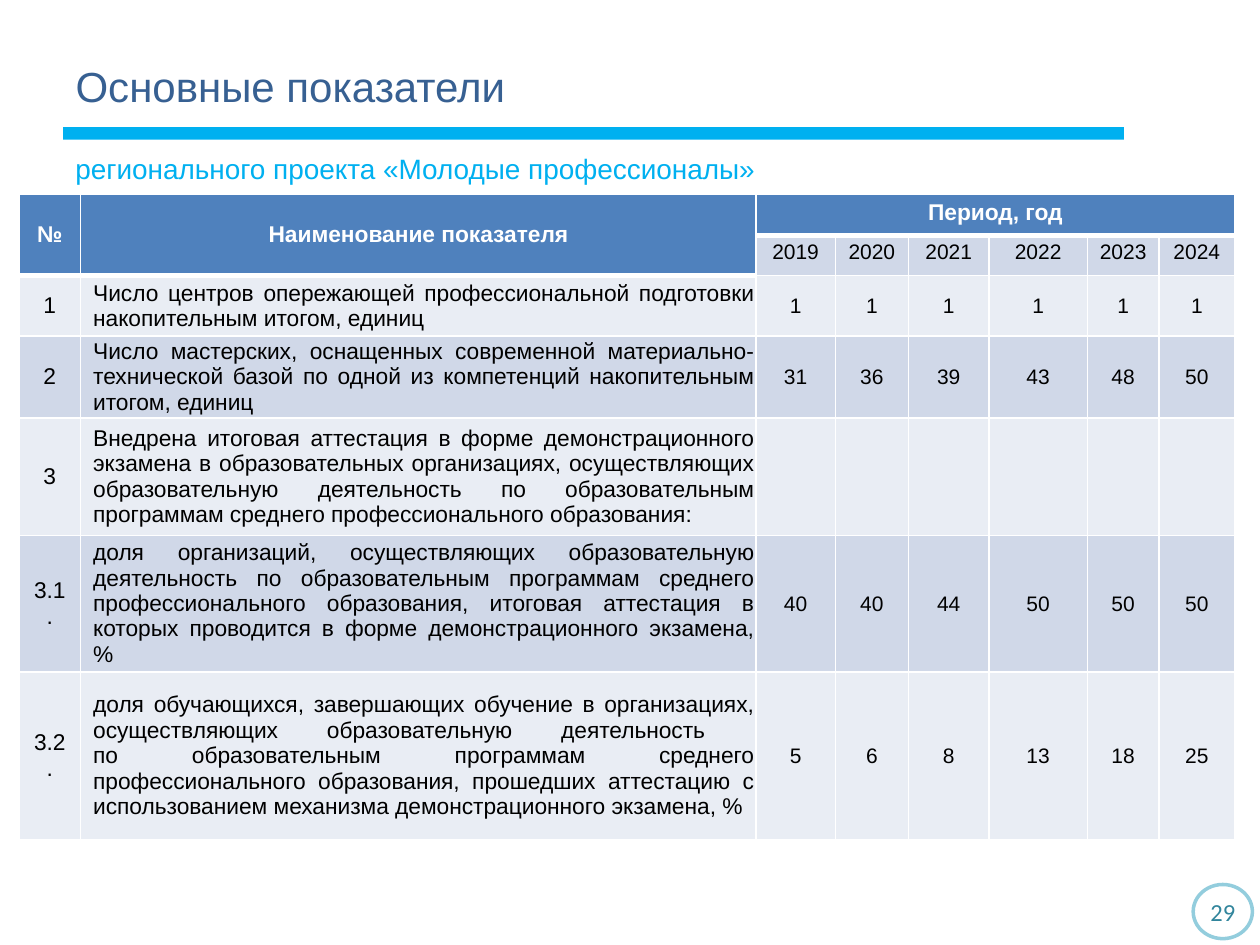
"""Build the slide with the key indicators of a regional project."""
from lxml.etree import SubElement
from pptx import Presentation
from pptx.dml.color import RGBColor
from pptx.enum.shapes import MSO_SHAPE as Shape
from pptx.enum.text import MSO_ANCHOR as Anchor, PP_ALIGN as Align
from pptx.oxml.ns import qn
from pptx.util import Inches, Pt

SKY = RGBColor(0x00, 0xB0, 0xF0)
NAVY = RGBColor(0x37, 0x60, 0x92)
HEADER = RGBColor(0x4F, 0x81, 0xBD)
BAND_DARK = RGBColor(0xD0, 0xD8, 0xE8)
BAND_LIGHT = RGBColor(0xE9, 0xED, 0xF4)
RING = RGBColor(0x93, 0xCD, 0xDD)
TEAL = RGBColor(0x31, 0x85, 0x9C)
WHITE = RGBColor(0xFF, 0xFF, 0xFF)
BLACK = RGBColor(0x00, 0x00, 0x00)

YEARS = ["2019", "2020", "2021", "2022", "2023", "2024"]
INDICATORS = [
    ("1", "Число центров опережающей профессиональной подготовки накопительным итогом, единиц",
     [1, 1, 1, 1, 1, 1]),
    ("2", "Число мастерских, оснащенных современной материально-технической базой "
     "по одной из компетенций накопительным итогом, единиц",
     [31, 36, 39, 43, 48, 50]),
    ("3", "Внедрена итоговая аттестация в форме демонстрационного экзамена "
     "в образовательных организациях, осуществляющих образовательную деятельность "
     "по образовательным программам среднего профессионального образования:",
     [""] * 6),
    ("3.1.", "доля организаций, осуществляющих образовательную деятельность "
     "по образовательным программам среднего профессионального образования, "
     "итоговая аттестация в которых проводится в форме демонстрационного экзамена, %",
     [40, 40, 44, 50, 50, 50]),
    ("3.2.", "доля обучающихся, завершающих обучение в организациях, "
     "осуществляющих образовательную деятельность \n"
     "по образовательным программам среднего профессионального образования, прошедших "
     "аттестацию с использованием механизма демонстрационного экзамена, %",
     [5, 6, 8, 13, 18, 25]),
]
COLUMN_WIDTHS = [0.49, 5.36, 0.63, 0.58, 0.64, 0.78, 0.57, 0.6]
ROW_HEIGHTS = [0.33, 0.3, 0.48, 0.61, 0.93, 1.01, 1.33]


def write(frame, text, size=12, color=BLACK, bold=False, align=Align.CENTER, font="Arial"):
    paragraph = frame.paragraphs[0]
    paragraph.text = str(text)
    paragraph.alignment = align
    for run in paragraph.runs:
        run.font.name = font
        run.font.size = Pt(size)
        run.font.bold = bold
        run.font.color.rgb = color
    return paragraph


def paint(cell, color, anchor=Anchor.MIDDLE):
    cell.fill.solid()
    cell.fill.fore_color.rgb = color
    cell.vertical_anchor = anchor


prs = Presentation()
prs.slide_width, prs.slide_height = Inches(10), Inches(7.5)
slide = prs.slides.add_slide(prs.slide_layouts[5])
shapes = slide.shapes

title = shapes.title
title.left, title.top = Inches(0.5), Inches(0.43)
title.width, title.height = Inches(7.79), Inches(0.64)
title.text_frame.vertical_anchor = Anchor.TOP
write(title.text_frame, "Основные показатели", size=24, color=NAVY, align=Align.LEFT)

rule = shapes.add_shape(Shape.RECTANGLE, Inches(0.5), Inches(1.01), Inches(8.42), Inches(0.1))
rule.shadow.inherit = False
rule.fill.solid()
rule.fill.fore_color.rgb = SKY
rule.line.fill.background()

subtitle = shapes.add_textbox(Inches(0.5), Inches(1.15), Inches(8.56), Inches(0.49)).text_frame
subtitle.word_wrap = True
write(subtitle, "регионального проекта «Молодые профессионалы»", size=16, color=SKY, align=Align.LEFT)

table = shapes.add_table(len(ROW_HEIGHTS), len(COLUMN_WIDTHS), Inches(0.15), Inches(1.54),
                         Inches(sum(COLUMN_WIDTHS)), Inches(sum(ROW_HEIGHTS))).table
for column, width in zip(table.columns, COLUMN_WIDTHS):
    column.width = Inches(width)
for row, height in zip(table.rows, ROW_HEIGHTS):
    row.height = Inches(height)

table.cell(0, 0).merge(table.cell(1, 0))
table.cell(0, 1).merge(table.cell(1, 1))
table.cell(0, 2).merge(table.cell(0, 7))
HEADINGS = [("№", Anchor.MIDDLE), ("Наименование показателя", Anchor.MIDDLE), ("Период, год", Anchor.TOP)]
for col, (heading, anchor) in enumerate(HEADINGS):
    cell = table.cell(0, col)
    paint(cell, HEADER, anchor)
    write(cell.text_frame, heading, size=13, color=WHITE, bold=True)
    properties = cell._tc.get_or_add_tcPr()
    for position, (side, weight) in enumerate([("lnL", 1), ("lnR", 1), ("lnT", 1), ("lnB", 3)]):
        border = SubElement(properties, qn(f"a:{side}"), w=str(Pt(weight)))
        line_fill = SubElement(border, qn("a:solidFill"))
        SubElement(line_fill, qn("a:srgbClr"), val=str(WHITE))
        properties.insert(position, border)

for col, year in enumerate(YEARS, start=2):
    cell = table.cell(1, col)
    paint(cell, BAND_DARK, Anchor.TOP)
    cell.margin_left = cell.margin_right = Inches(0.05)
    cell.margin_top = cell.margin_bottom = Inches(0.04)
    write(cell.text_frame, year)

for row, (number, indicator, values) in enumerate(INDICATORS, start=2):
    for col, text in enumerate([number, indicator, *values]):
        cell = table.cell(row, col)
        paint(cell, BAND_DARK if row % 2 else BAND_LIGHT)
        paragraph = write(cell.text_frame, text, size=13 if col < 2 else 12,
                          align=Align.JUSTIFY if col == 1 else Align.CENTER)
        if col == 1:
            cell.margin_left = cell.margin_right = Inches(0.02)
            cell.margin_top = cell.margin_bottom = 0
            paragraph._p.get_or_add_pPr().set("marL", str(Inches(0.08)))

badge = shapes.add_shape(Shape.OVAL, Inches(9.47), Inches(7.02), Inches(0.47), Inches(0.43))
badge.shadow.inherit = False
badge.fill.solid()
badge.fill.fore_color.rgb = WHITE
badge.line.color.rgb = RING
badge.line.width = Pt(2)
number_frame = badge.text_frame
number_frame.margin_left = number_frame.margin_right = 0
number_frame.margin_top = number_frame.margin_bottom = 0
number_frame.vertical_anchor = Anchor.MIDDLE
write(number_frame, "29", size=14, color=TEAL, font="Calibri")

prs.save("out.pptx")
